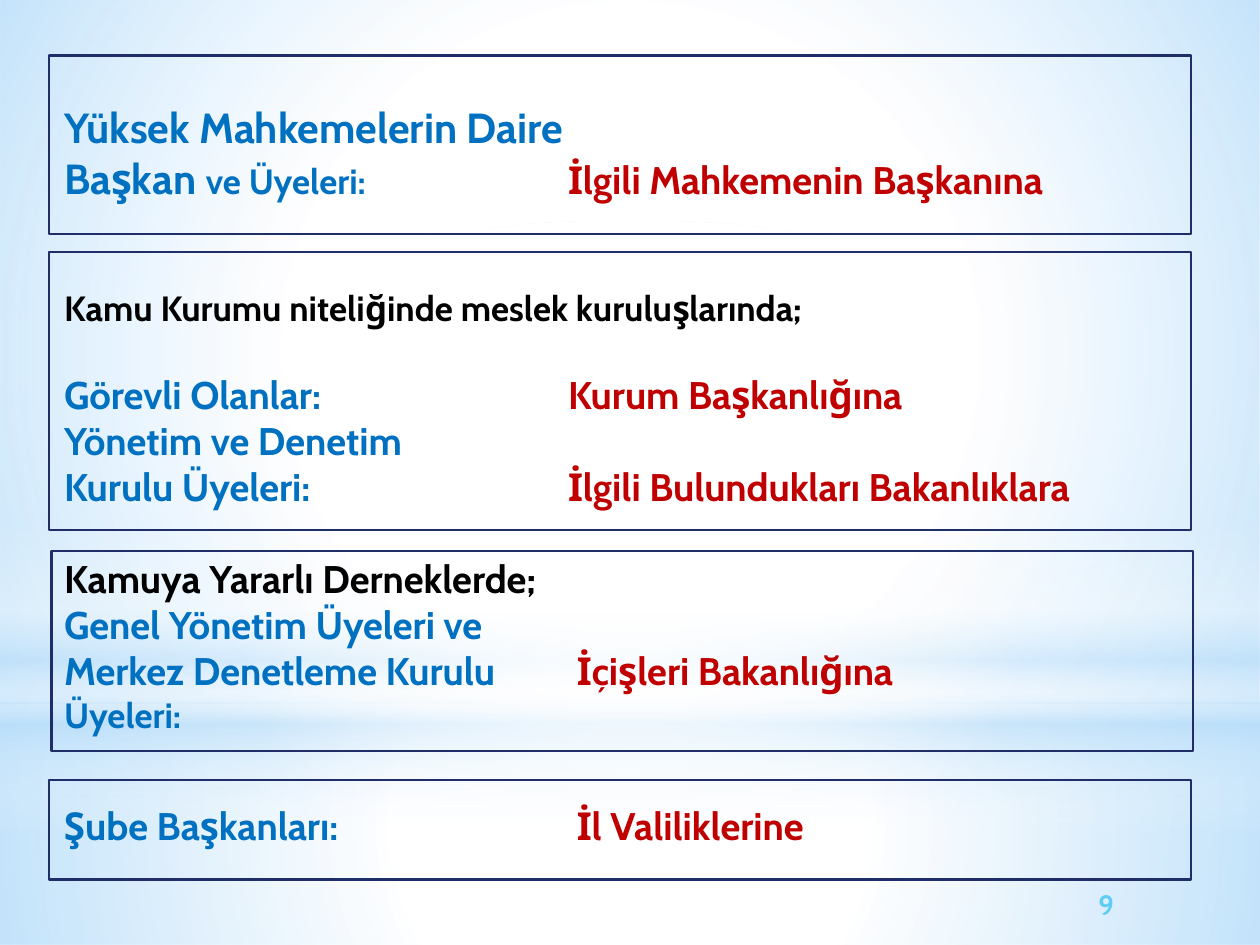
from lxml import etree
from pptx import Presentation
from pptx.dml.color import RGBColor
from pptx.enum.shapes import MSO_SHAPE as Shape
from pptx.enum.text import MSO_ANCHOR as Anchor, MSO_AUTO_SIZE as AutoSize
from pptx.oxml import parse_xml
from pptx.oxml.ns import qn
from pptx.util import Inches, Pt

DRAWING_NS = "http://schemas.openxmlformats.org/drawingml/2006/main"
BLUE, RED, BLACK, NAVY, SKY = "0070C0", "C00000", "000000", "1F2E69", "5ECCF3"
PALE, WHITE = "B4DCFA", "FFFFFF"
RADIAL = ('<a:path path="circle"><a:fillToRect l="50000" t="50000" '
          'r="50000" b="50000"/></a:path>')
VERTICAL = '<a:lin ang="5400000" scaled="0"/>'


def color(hex_value):
    return RGBColor.from_string(hex_value)


def add_text(area, paragraphs, anchor=Anchor.TOP):
    """Each paragraph is (space before, tab stop or None, runs of (text, size, color))."""
    box = slide.shapes.add_textbox(*map(Inches, area))
    frame = box.text_frame
    frame.word_wrap = True
    frame.auto_size = AutoSize.SHAPE_TO_FIT_TEXT
    frame.vertical_anchor = anchor
    for index, (space, tab_stop, runs) in enumerate(paragraphs):
        para = frame.paragraphs[0] if index == 0 else frame.add_paragraph()
        para.space_before = Pt(space)
        if tab_stop:
            tabs = etree.SubElement(para._p.get_or_add_pPr(), qn("a:tabLst"))
            etree.SubElement(tabs, qn("a:tab"), pos=str(Inches(tab_stop)), algn="l")
        for text, size, hex_value in runs:
            span = para.add_run()
            span.text = text
            span.font.color.rgb = color(hex_value)
            font_format = {"name": "Cabin", "size": Pt(size), "bold": True}
            for name, value in font_format.items():
                setattr(span.font, name, value)


deck = Presentation()
deck.slide_width, deck.slide_height = Inches(10), Inches(7.5)
slide = deck.slides.add_slide(deck.slide_layouts[6])

# Background glow: gradient stops are (position %, color, opacity %)
glows = [
    (Shape.RECTANGLE, (0, 5.58, 10, 1.92), RADIAL,
     [(0, WHITE, 91), (37, WHITE, 76), (100, PALE, 79)]),
    (Shape.RECTANGLE, (0, 0, 10, 5.58), RADIAL,
     [(0, WHITE, 89), (48, WHITE, 62), (100, PALE, 79)]),
    (Shape.RECTANGLE, (0, 4.12, 10, 2.5), VERTICAL,
     [(0, WHITE, 0), (29, WHITE, 30), (45, PALE, 40),
      (55, WHITE, 26), (65, PALE, 60), (100, WHITE, 0)]),
    (Shape.OVAL, (0, 1.75, 10, 5.58), RADIAL,
     [(0, WHITE, 100), (56, WHITE, 0)]),
]
for kind, area, direction, stops in glows:
    glow = slide.shapes.add_shape(kind, *map(Inches, area))
    glow.shadow.inherit = False
    glow.line.fill.background()
    stop_xml = "".join(
        f'<a:gs pos="{position * 1000}"><a:srgbClr val="{hex_value}">'
        f'<a:alpha val="{opacity * 1000}"/></a:srgbClr></a:gs>'
        for position, hex_value, opacity in stops)
    gradient = parse_xml(f'<a:gradFill xmlns:a="{DRAWING_NS}" rotWithShape="1">'
                         f'<a:gsLst>{stop_xml}</a:gsLst>{direction}</a:gradFill>')
    glow._element.spPr.find(qn("a:prstGeom")).addnext(gradient)

# Frames around the four groups
for left, top, height in [(0.39, 0.44, 1.42), (0.39, 2, 2.21),
                          (0.41, 4.37, 1.59), (0.39, 6.19, 0.79)]:
    border = slide.shapes.add_shape(Shape.RECTANGLE, Inches(left), Inches(top),
                                    Inches(9.06), Inches(height))
    border.shadow.inherit = False
    border.fill.background()
    border.line.color.rgb = color(NAVY)
    border.line.width = Pt(1.25)

# Who is addressed (blue) and the authority in charge (red, after a tab)
add_text((0.41, 0.76, 9.45, 5.86), [
    (0, None, [("Yüksek Mahkemelerin Daire", 24, BLUE)]),
    (0, 4, [("Başkan ", 24, BLUE), ("ve Üyeleri:\t", 20, BLUE),
            ("İlgili Mahkemenin Başkanına", 22, RED)]),
    (48, None, [("Kamu Kurumu niteliğinde meslek kuruluşlarında;", 20, BLACK)]),
    (24, 4, [("Görevli Olanlar:\t", 22, BLUE), ("Kurum Başkanlığına", 22, RED)]),
    (0, None, [("Yönetim ve Denetim", 22, BLUE)]),
    (0, 4, [("Kurulu Üyeleri:\t", 22, BLUE),
            ("İlgili Bulundukları Bakanlıklara", 22, RED)]),
    (26, None, [("Kamuya Yararlı Derneklerde;", 22, BLACK)]),
    (0, None, [("Genel Yönetim Üyeleri ve", 22, BLUE)]),
    (0, 4.07, [("Merkez Denetleme Kurulu\t", 22, BLUE),
               ("İçişleri Bakanlığına", 22, RED)]),
    (0, None, [("Üyeleri:", 20, BLUE)]),
])
add_text((0.41, 6.32, 8.93, 0.47), [
    (0, 4.07, [("Şube Başkanları:\t", 22, BLUE), ("İl Valiliklerine", 22, RED)]),
])
add_text((8.62, 6.98, 1.27, 0.4), [(0, None, [("9", 16, SKY)])], Anchor.MIDDLE)

deck.save("out.pptx")
